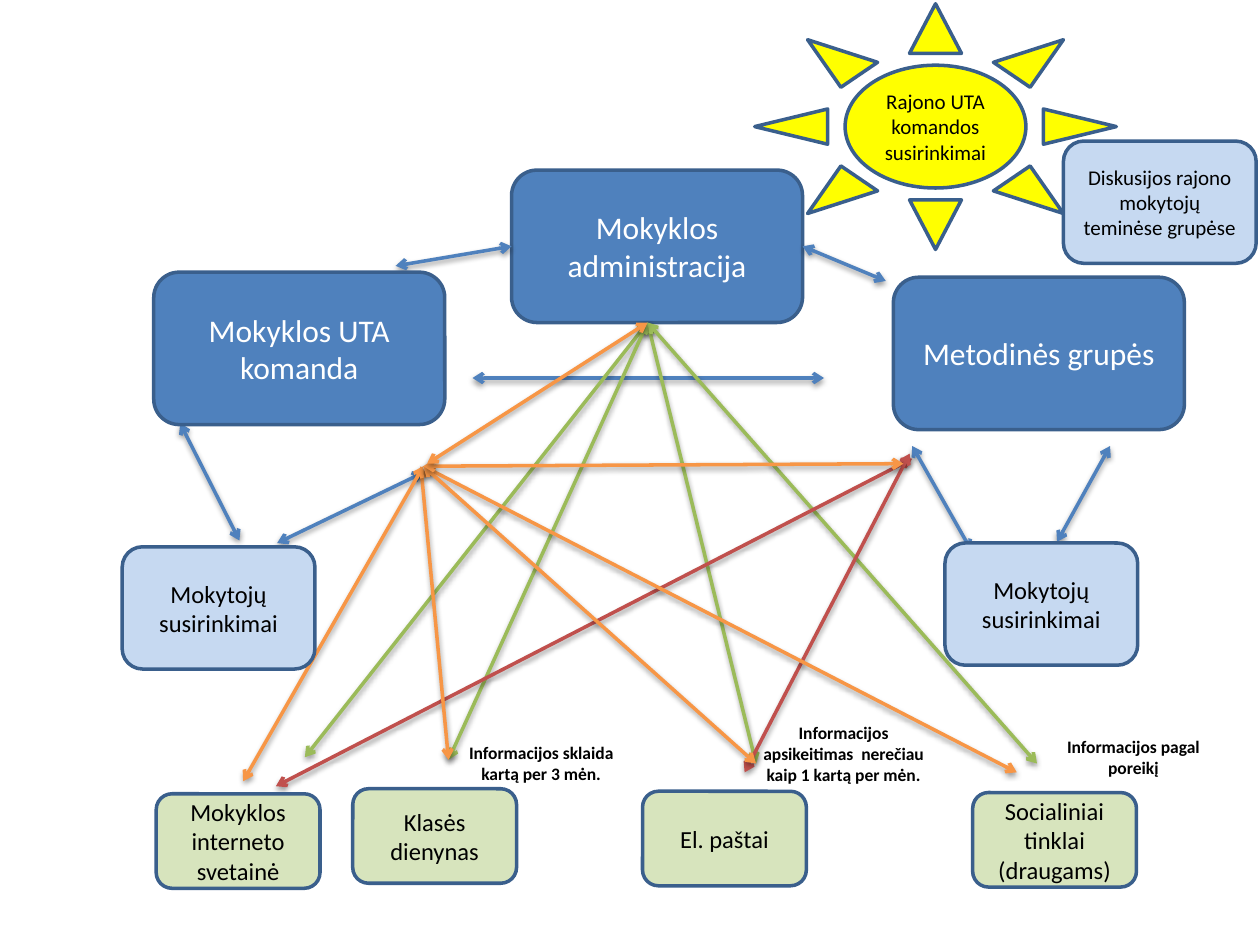
from lxml.etree import SubElement
from pptx import Presentation
from pptx.dml.color import RGBColor
from pptx.enum.shapes import MSO_CONNECTOR, MSO_SHAPE
from pptx.enum.text import MSO_ANCHOR, MSO_AUTO_SIZE, PP_ALIGN
from pptx.oxml.ns import qn
from pptx.util import Inches, Pt

BLUE = RGBColor(0x4F, 0x81, 0xBD)
OUTLINE = RGBColor(0x3A, 0x5F, 0x8C)
PALE_BLUE = RGBColor(0xC6, 0xD9, 0xF1)
PALE_GREEN = RGBColor(0xD7, 0xE4, 0xBD)
GREEN = RGBColor(0x9B, 0xBB, 0x59)
RED = RGBColor(0xC0, 0x50, 0x4D)
ORANGE = RGBColor(0xF7, 0x96, 0x46)
YELLOW = RGBColor(0xFF, 0xFF, 0x00)
WHITE = RGBColor(0xFF, 0xFF, 0xFF)
BLACK = RGBColor(0x00, 0x00, 0x00)

STYLES = {
    "unit": (MSO_SHAPE.ROUNDED_RECTANGLE, (2.31, 1.21), BLUE, {"size": Pt(18), "color": WHITE}),
    "discussion": (MSO_SHAPE.ROUNDED_RECTANGLE, (1.53, 0.97), PALE_BLUE, {"size": Pt(12), "color": BLACK}),
    "meeting": (MSO_SHAPE.ROUNDED_RECTANGLE, (1.53, 0.97), PALE_BLUE, {"size": Pt(14), "color": BLACK}),
    "channel": (MSO_SHAPE.ROUNDED_RECTANGLE, (1.3, 0.75), PALE_GREEN, {"size": Pt(14), "color": BLACK}),
    "sun": (MSO_SHAPE.SUN, (2.87, 1.95), YELLOW, {"size": Pt(12), "color": BLACK}),
}
LABEL_FORMAT = {"size": Pt(10), "color": BLACK, "bold": True}

ADMINISTRATION = ("unit", "Mokyklos administracija", 4.06, 1.35)
BOXES = [
    ("unit", "Mokyklos UTA komanda", 1.22, 2.16),
    ("unit", "Metodinės grupės", 7.09, 2.2),
    ("discussion", "Diskusijos rajono mokytojų teminėse grupėse", 8.44, 1.12),
    ("meeting", "Mokytojų susirinkimai", 0.97, 4.34),
    ("meeting", "Mokytojų susirinkimai", 7.5, 4.31),
    ("channel", "Klasės dienynas", 2.8, 6.26),
    ("channel", "Mokyklos interneto svetainė", 1.24, 6.3),
    ("channel", "El. paštai", 5.1, 6.28),
    ("channel", "Socialiniai tinklai (draugams)", 7.72, 6.29),
    ("sun", "Rajono UTA komandos susirinkimai", 5.99, 0.03),
]
LABELS = [
    ("Informacijos apsikeitimas  nerečiau kaip 1 kartą per mėn.", 5.93, 5.68, 0.61),
    ("Informacijos sklaida kartą per 3 mėn.", 3.53, 5.84, 0.44),
    ("Informacijos pagal poreikį", 8.23, 5.79, 0.44),
]
LABEL_WIDTH = 1.53

ADMINISTRATION_HUB = (5.14, 2.56)
TEAM_HUB = (3.36, 3.7)
DIARY_END = (3.56, 6.03)
MAIL_END = (6, 6.06)
ADMINISTRATION_LINKS = [
    ((4.06, 1.95), (3.14, 2.11), 1),
    ((6.37, 1.95), (7.03, 2.23), 3),
]
LINKS = [
    (BLUE, (6.54, 3), [(3.75, 3)]),
    (BLUE, (7.24, 3.54), [(7.71, 4.37)]),
    (BLUE, (3.36, 3.75), [(2.2, 4.31)]),
    (BLUE, (1.43, 3.36), [(1.9, 4.29)]),
    (BLUE, (8.39, 4.3), [(8.81, 3.54)]),
    (GREEN, ADMINISTRATION_HUB, [(2.42, 6.01), DIARY_END, MAIL_END, (8.23, 6.06)]),
    (RED, (7.24, 3.64), [(2.19, 6.24)]),
    (RED, (7.22, 3.6), [(5.91, 6.13)]),
    (ORANGE, (3.34, 3.7), [DIARY_END]),
    (ORANGE, TEAM_HUB, [(8.07, 6.13), (1.93, 6.2), MAIL_END, (7.17, 3.68)]),
    (ORANGE, (3.39, 3.68), [ADMINISTRATION_HUB]),
]


def write_text(shape, text, formats):
    shape.text_frame.word_wrap = True
    paragraph = shape.text_frame.paragraphs[0]
    paragraph.text = text
    paragraph.alignment = PP_ALIGN.CENTER
    font = paragraph.runs[0].font
    for name, value in {"name": "Calibri", **formats}.items():
        if name == "color":
            font.color.rgb = value
        else:
            setattr(font, name, value)


def add_box(slide, style, text, left, top):
    preset, (width, height), fill, formats = STYLES[style]
    shape = slide.shapes.add_shape(preset, Inches(left), Inches(top), Inches(width), Inches(height))
    shape.shadow.inherit = False
    shape.fill.solid()
    shape.fill.fore_color.rgb = fill
    shape.line.color.rgb = OUTLINE
    shape.line.width = Pt(2)
    shape.text_frame.vertical_anchor = MSO_ANCHOR.MIDDLE
    write_text(shape, text, formats)
    return shape


def add_label(slide, text, left, top, height):
    label = slide.shapes.add_textbox(Inches(left), Inches(top), Inches(LABEL_WIDTH), Inches(height))
    label.text_frame.auto_size = MSO_AUTO_SIZE.SHAPE_TO_FIT_TEXT
    write_text(label, text, LABEL_FORMAT)


def add_arrow(slide, color, start, end):
    points = [Inches(value) for value in (*start, *end)]
    connector = slide.shapes.add_connector(MSO_CONNECTOR.STRAIGHT, *points)
    connector.line.color.rgb = color
    connector.line.width = Pt(2)
    properties = connector._element.spPr
    outline = properties.find(qn("a:ln"))
    for tag in ("a:headEnd", "a:tailEnd"):
        SubElement(outline, qn(tag), type="arrow")
    effects = SubElement(properties, qn("a:effectLst"))
    shadow = SubElement(effects, qn("a:outerShdw"), blurRad="40000", dist="20000",
                        dir="5400000", rotWithShape="0")
    shade = SubElement(shadow, qn("a:srgbClr"), val="000000")
    SubElement(shade, qn("a:alpha"), val="38000")
    return connector


def main():
    presentation = Presentation()
    presentation.slide_width = Inches(10)
    presentation.slide_height = Inches(7.5)
    slide = presentation.slides.add_slide(presentation.slide_layouts[6])

    administration = add_box(slide, *ADMINISTRATION)
    for start, end, side in ADMINISTRATION_LINKS:
        add_arrow(slide, BLUE, start, end).begin_connect(administration, side)
    for color, start, ends in LINKS:
        for end in ends:
            add_arrow(slide, color, start, end)
    for label in LABELS:
        add_label(slide, *label)
    for box in BOXES:
        add_box(slide, *box)

    presentation.save("out.pptx")


if __name__ == "__main__":
    main()
